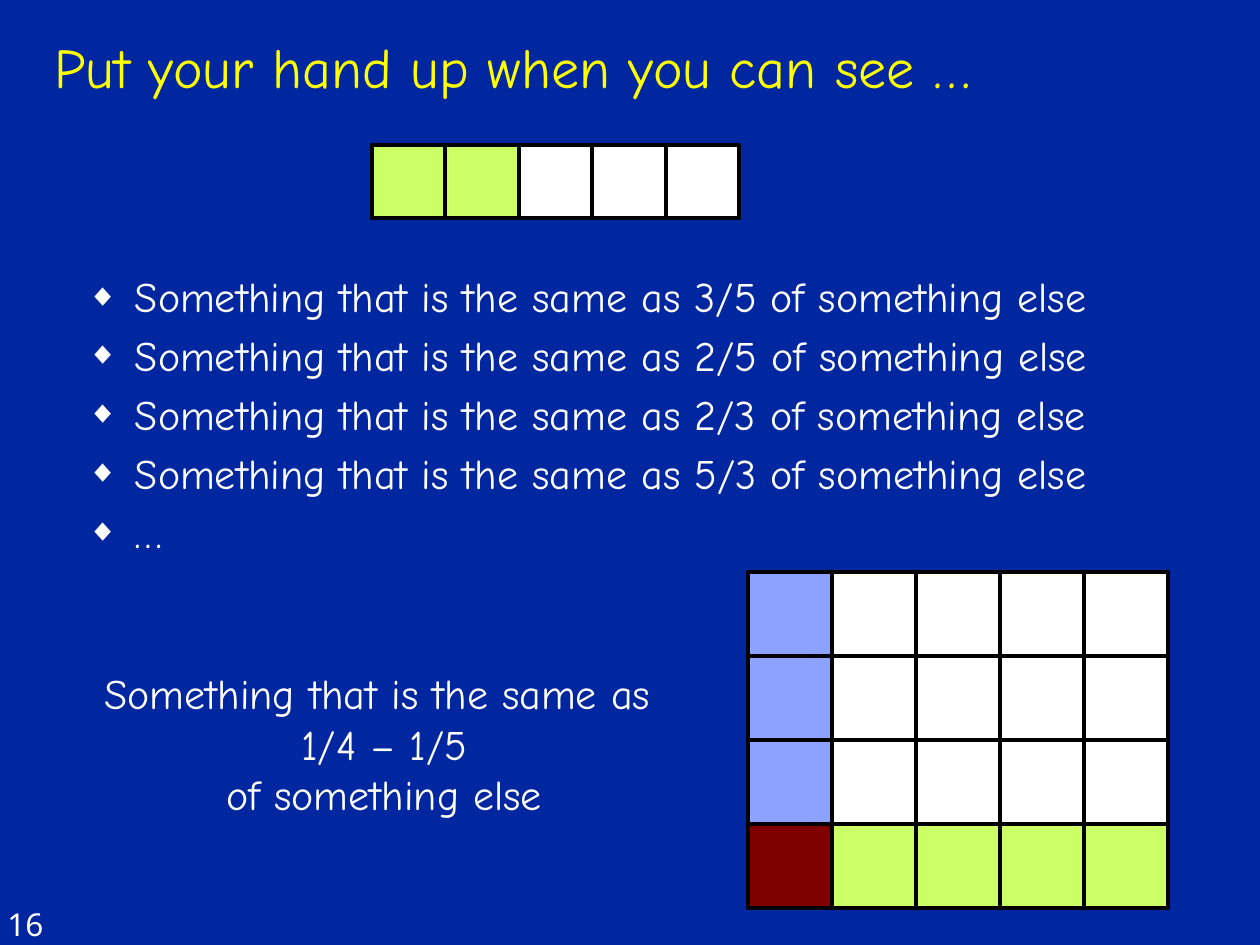
from lxml.etree import SubElement
from pptx import Presentation
from pptx.dml.color import RGBColor
from pptx.enum.shapes import MSO_SHAPE
from pptx.enum.text import MSO_ANCHOR, MSO_AUTO_SIZE, PP_ALIGN
from pptx.oxml.ns import qn
from pptx.util import Inches, Pt

COLORS = {"background": "00279F", "title": "FFFF00", "text": "FFFFFF", "outline": "000000",
          "W": "FFFFFF", "G": "CCFF66", "B": "8DA1FF", "R": "800000"}
FONT = "Comic Neue"

TITLE = "Put your hand up when you can see …"
BULLETS = [f"Something that is the same as {fraction} of something else"
           for fraction in ("3/5", "2/5", "2/3", "5/3")] + ["…"]
QUESTION = "Something that is the same as \v1/4 – 1/5\vof something else"
PAGE = "16"

# One letter per square, naming its colour
FIFTHS_BAR = ["GGWWW"]
TWENTIETHS_GRID = ["BWWWW", "BWWWW", "BWWWW", "RGGGG"]


def rgb(name):
    return RGBColor.from_string(COLORS[name])


def place(sp, left, top, width, height):
    sp.left, sp.top = Inches(left), Inches(top)
    sp.width, sp.height = Inches(width), Inches(height)


def write(sp, text, size, color="text", font=FONT, align=PP_ALIGN.LEFT,
          anchor=MSO_ANCHOR.TOP, wrap=True):
    tf = sp.text_frame
    tf.text = text
    tf.word_wrap = wrap
    tf.auto_size = MSO_AUTO_SIZE.NONE
    tf.vertical_anchor = anchor
    for p in tf.paragraphs:
        p.alignment = align
        for r in p.runs:
            r.font.size = Pt(size)
            r.font.name = font
            r.font.color.rgb = rgb(color)


def add_bullets(tf):
    for i, p in enumerate(tf.paragraphs):
        p.space_before = Pt(4.8 if i else 0)
        pPr = p._p.get_or_add_pPr()
        pPr.set("marL", str(Inches(0.38)))
        pPr.set("indent", str(-Inches(0.38)))
        SubElement(pPr, qn("a:buSzPct"), val="75000")
        SubElement(pPr, qn("a:buChar"), char="◆")


def add_squares(slide, rows, left, top, side):
    group = slide.shapes.add_group_shape()
    for i, row in enumerate(rows):
        for j, color in enumerate(row):
            sp = group.shapes.add_shape(
                MSO_SHAPE.RECTANGLE, Inches(left + j * side), Inches(top + i * side),
                Inches(side), Inches(side))
            sp.shadow.inherit = False
            sp.fill.solid()
            sp.fill.fore_color.rgb = rgb(color)
            sp.line.color.rgb = rgb("outline")
            sp.line.width = Pt(2.25)


def add_text(slide, box, text, size, **style):
    sp = slide.shapes.add_textbox(*map(Inches, box))
    write(sp, text, size, **style)


def main():
    prs = Presentation()
    prs.slide_width, prs.slide_height = Inches(10), Inches(7.5)
    slide = prs.slides.add_slide(prs.slide_layouts[1])
    slide.background.fill.solid()
    slide.background.fill.fore_color.rgb = rgb("background")

    title, body = slide.placeholders[0], slide.placeholders[1]
    place(title, 0.33, 0.17, 8.5, 0.67)
    write(title, TITLE, 32, color="title", anchor=MSO_ANCHOR.BOTTOM)
    place(body, 0.59, 2.1, 8.82, 2.99)
    write(body, "\n".join(BULLETS), 24)
    add_bullets(body.text_frame)

    add_squares(slide, FIFTHS_BAR, 2.95, 1.15, 7 / 12)
    add_squares(slide, TWENTIETHS_GRID, 5.94, 4.54, 2 / 3)
    add_text(slide, (0.6, 5.25, 4.9, 1.31), QUESTION, 24, align=PP_ALIGN.CENTER, wrap=False)
    add_text(slide, (-0.04, 7.13, 0.75, 0.4), PAGE, 18, font="Noto Sans")
    prs.save("out.pptx")


if __name__ == "__main__":
    main()
